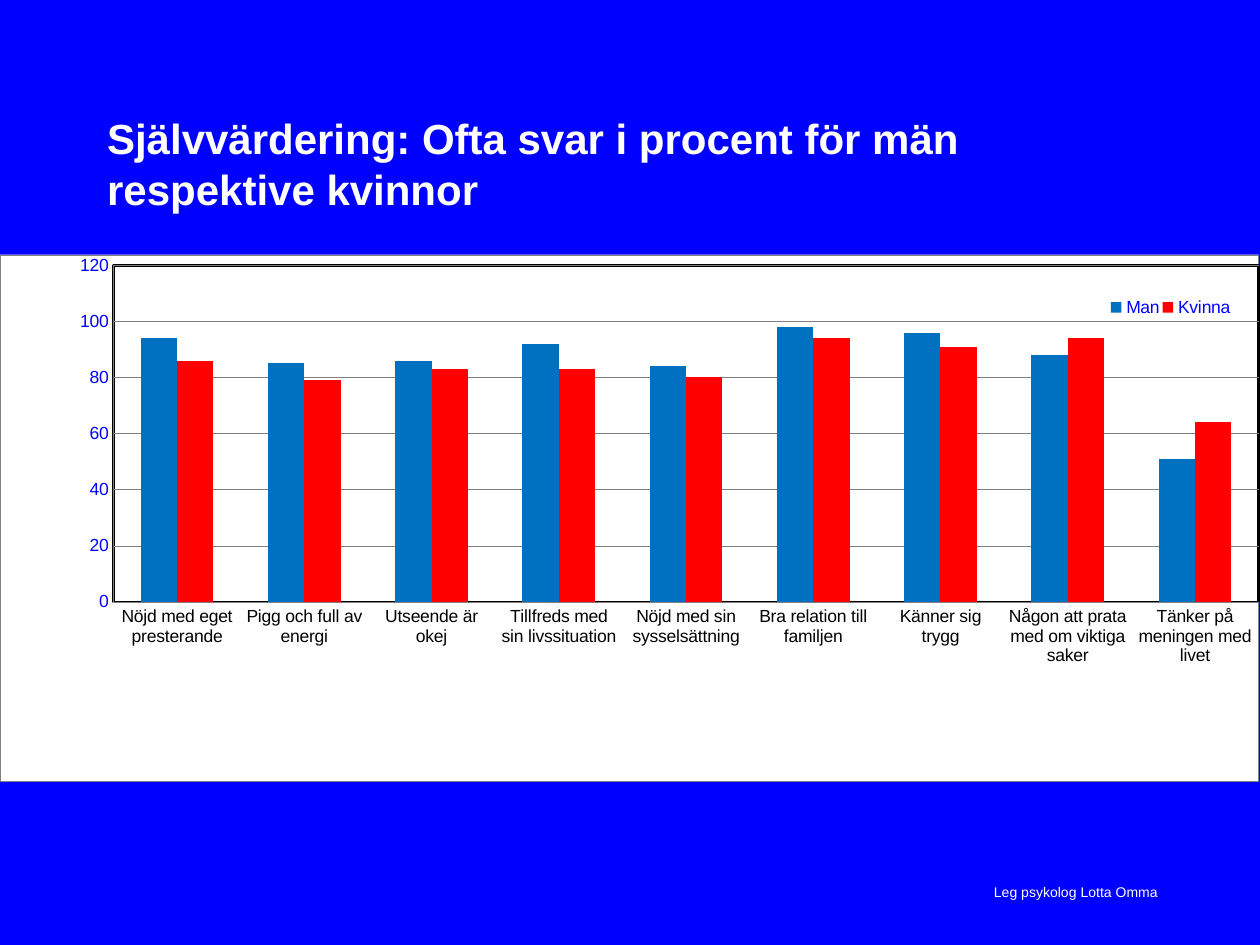
from lxml import etree
from pptx import Presentation
from pptx.chart.data import CategoryChartData
from pptx.dml.color import RGBColor
from pptx.enum.chart import XL_CHART_TYPE, XL_LEGEND_POSITION, XL_TICK_MARK
from pptx.enum.text import MSO_ANCHOR, PP_ALIGN
from pptx.oxml import parse_xml
from pptx.oxml.ns import nsdecls, qn
from pptx.util import Inches, Pt

COLUMNS = XL_CHART_TYPE.COLUMN_CLUSTERED
LEGEND_RIGHT = XL_LEGEND_POSITION.RIGHT
NO_TICK = XL_TICK_MARK.NONE
MIDDLE = MSO_ANCHOR.MIDDLE
LEFT, CENTER = PP_ALIGN.LEFT, PP_ALIGN.CENTER

FONT = "Arial"
BLUE, WHITE, BLACK, GRAY = "0000FF", "FFFFFF", "000000", "808080"

TITLE = "Självvärdering: Ofta svar i procent för män respektive kvinnor"
AUTHOR = "Leg psykolog Lotta Omma"
ANSWERS = [
    ("Nöjd med eget presterande", 94, 86),
    ("Pigg och full av energi", 85, 79),
    ("Utseende är okej", 86, 83),
    ("Tillfreds med sin livssituation", 92, 83),
    ("Nöjd med sin sysselsättning", 84, 80),
    ("Bra relation till familjen", 98, 94),
    ("Känner sig trygg", 96, 91),
    ("Någon att prata med om viktiga saker", 88, 94),
    ("Tänker på meningen med livet", 51, 64),
]
GROUPS = [("Man", "0070C0"), ("Kvinna", "FF0000")]


def rgb(value):
    return RGBColor.from_string(value)


def paint(fill, color):
    fill.solid()
    fill.fore_color.rgb = rgb(color)


def style_font(font, size, color, bold=False):
    font.name = FONT
    font.size = Pt(size)
    font.bold = bold
    font.color.rgb = rgb(color)


def write(shape, text, size, color=WHITE, bold=False, align=LEFT, wrap=True):
    frame = shape.text_frame
    frame.word_wrap = wrap
    frame.vertical_anchor = MIDDLE
    paragraph = frame.paragraphs[0]
    paragraph.alignment = align
    run = paragraph.add_run()
    run.text = text
    style_font(run.font, size, color, bold)


def set_line(line, color, width):
    line.color.rgb = rgb(color)
    line.width = Pt(width)


def box_format(fill, color, width):
    return parse_xml(
        f'<c:spPr {nsdecls("c", "a")}>'
        f'<a:solidFill><a:srgbClr val="{fill}"/></a:solidFill>'
        f'<a:ln w="{Pt(width)}"><a:solidFill><a:srgbClr val="{color}"/>'
        '</a:solidFill></a:ln></c:spPr>'
    )


def manual_layout(x, y, w, h, inner=False):
    layout = etree.Element(qn("c:layout"))
    manual = etree.SubElement(layout, qn("c:manualLayout"))
    settings = [("layoutTarget", "inner")] if inner else []
    settings += [("xMode", "edge"), ("yMode", "edge")]
    settings += [("x", x), ("y", y), ("w", w), ("h", h)]
    for tag, value in settings:
        etree.SubElement(manual, qn(f"c:{tag}")).set("val", str(value))
    return layout


def replace_layout(parent, position, layout):
    for old in parent.findall(qn("c:layout")):
        parent.remove(old)
    parent.insert(position, layout)


def add_answer_chart(slide):
    data = CategoryChartData(number_format="0")
    data.categories = [answer[0] for answer in ANSWERS]
    for column, (group, _) in enumerate(GROUPS, start=1):
        data.add_series(group, [answer[column] for answer in ANSWERS])
    chart = slide.shapes.add_chart(
        COLUMNS, Inches(0), Inches(2.02), Inches(10), Inches(4.18), data
    ).chart
    chart.has_title = False
    style_font(chart.font, 10, BLUE)

    bars = chart.plots[0]
    bars.gap_width = 150
    bars.overlap = 0
    bars.vary_by_categories = False
    for series, (_, color) in zip(bars.series, GROUPS):
        paint(series.format.fill, color)

    for axis, color in ((chart.category_axis, BLACK), (chart.value_axis, BLUE)):
        axis.major_tick_mark = axis.minor_tick_mark = NO_TICK
        style_font(axis.tick_labels.font, 10, color)
        set_line(axis.format.line, GRAY, 0.25)
    values = chart.value_axis
    values.minimum_scale, values.maximum_scale, values.major_unit = 0, 120, 20
    values.has_major_gridlines = True
    set_line(values.major_gridlines.format.line, GRAY, 0.25)

    chart.has_legend = True
    legend = chart.legend
    legend.position = LEGEND_RIGHT
    legend.include_in_layout = True
    style_font(legend.font, 10, BLUE)

    space = chart.element
    chart_part = space.find(qn("c:chart"))
    chart_part.addnext(box_format(WHITE, GRAY, 0.25))
    plot_area = chart_part.find(qn("c:plotArea"))
    replace_layout(plot_area, 0, manual_layout(0.09, 0.02, 0.91, 0.64, inner=True))
    plot_area.append(box_format(WHITE, BLACK, 1.5))
    replace_layout(chart_part.find(qn("c:legend")), 1,
                   manual_layout(0.88, 0.05, 0.1, 0.1))


def main():
    deck = Presentation()
    deck.slide_width, deck.slide_height = Inches(10), Inches(7.5)
    slide = deck.slides.add_slide(deck.slide_layouts[5])
    paint(slide.background.fill, BLUE)

    title = slide.shapes.title
    title.left, title.top = Inches(0.75), Inches(0.67)
    title.width, title.height = Inches(8.5), Inches(1.25)
    paint(title.fill, BLUE)
    write(title, TITLE, size=24, bold=True)

    author = slide.shapes.add_textbox(
        Inches(7.28), Inches(6.83), Inches(2.52), Inches(0.5))
    write(author, AUTHOR, size=8, align=CENTER, wrap=False)

    add_answer_chart(slide)
    deck.save("out.pptx")


if __name__ == "__main__":
    main()
